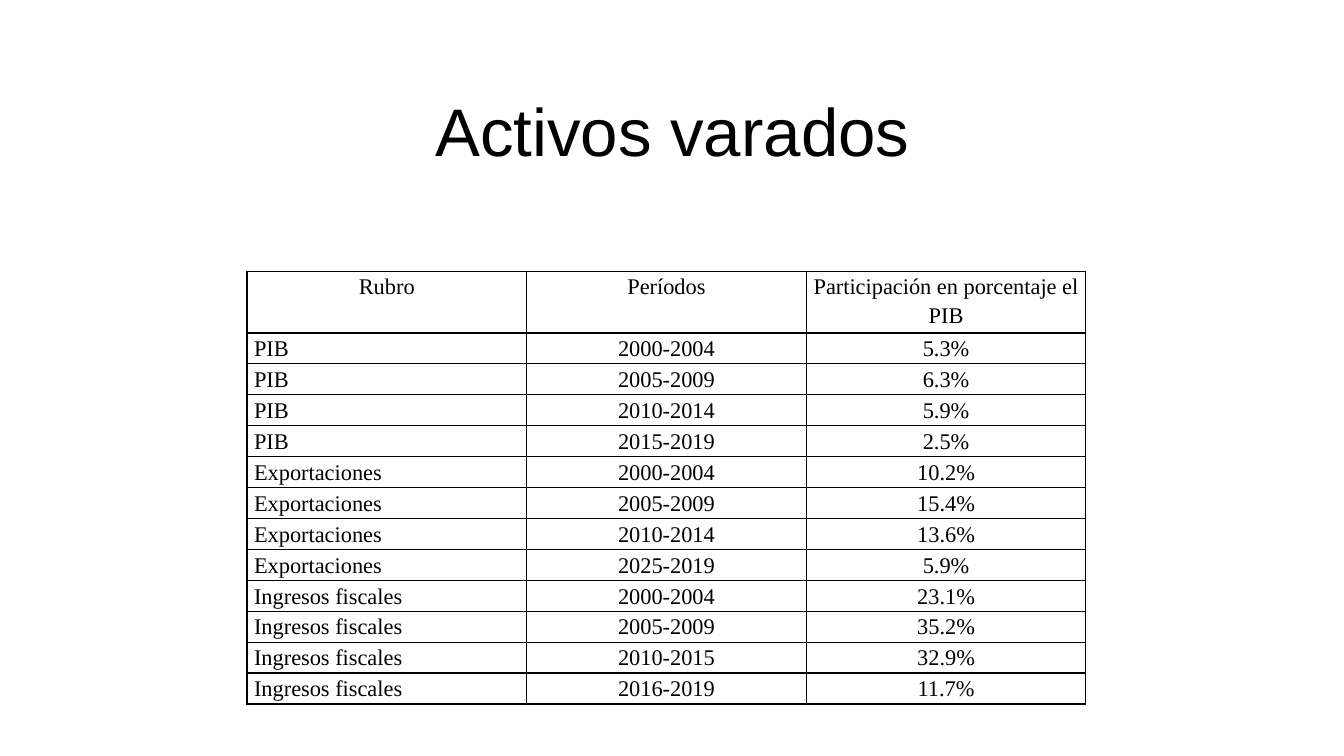
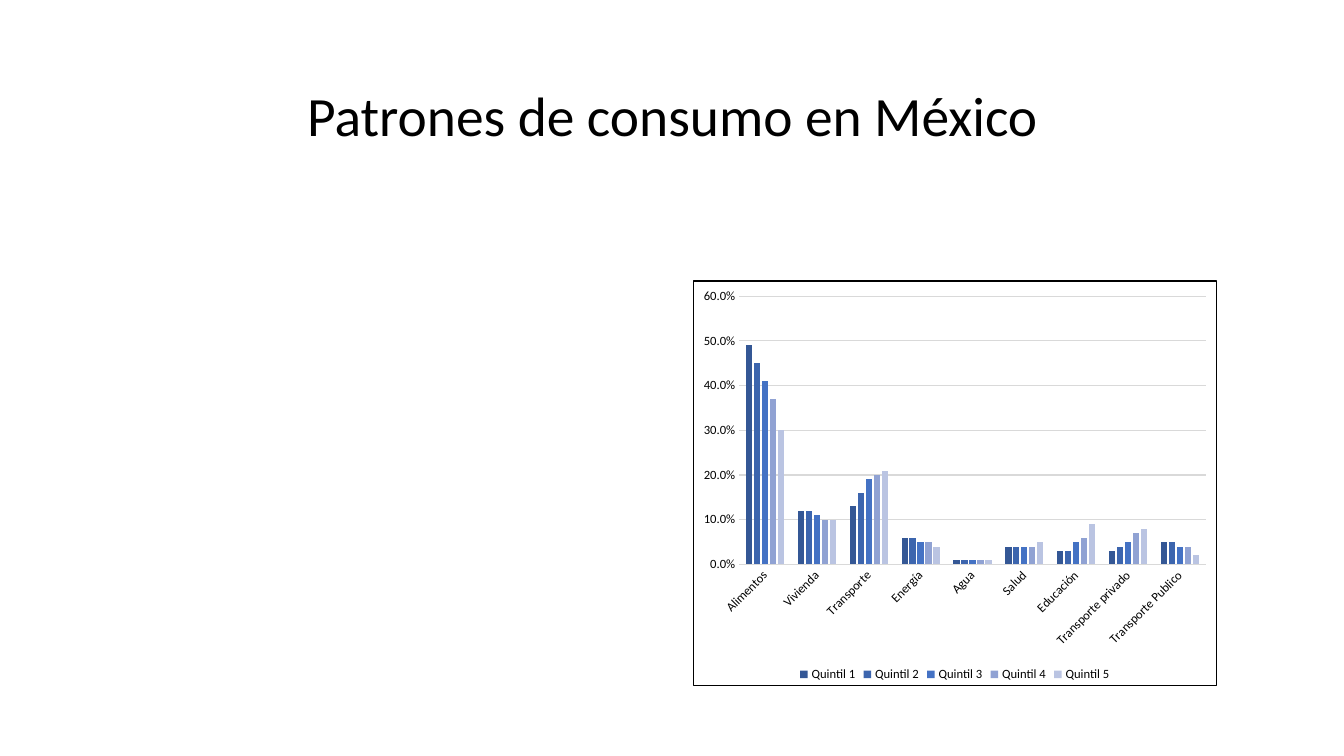
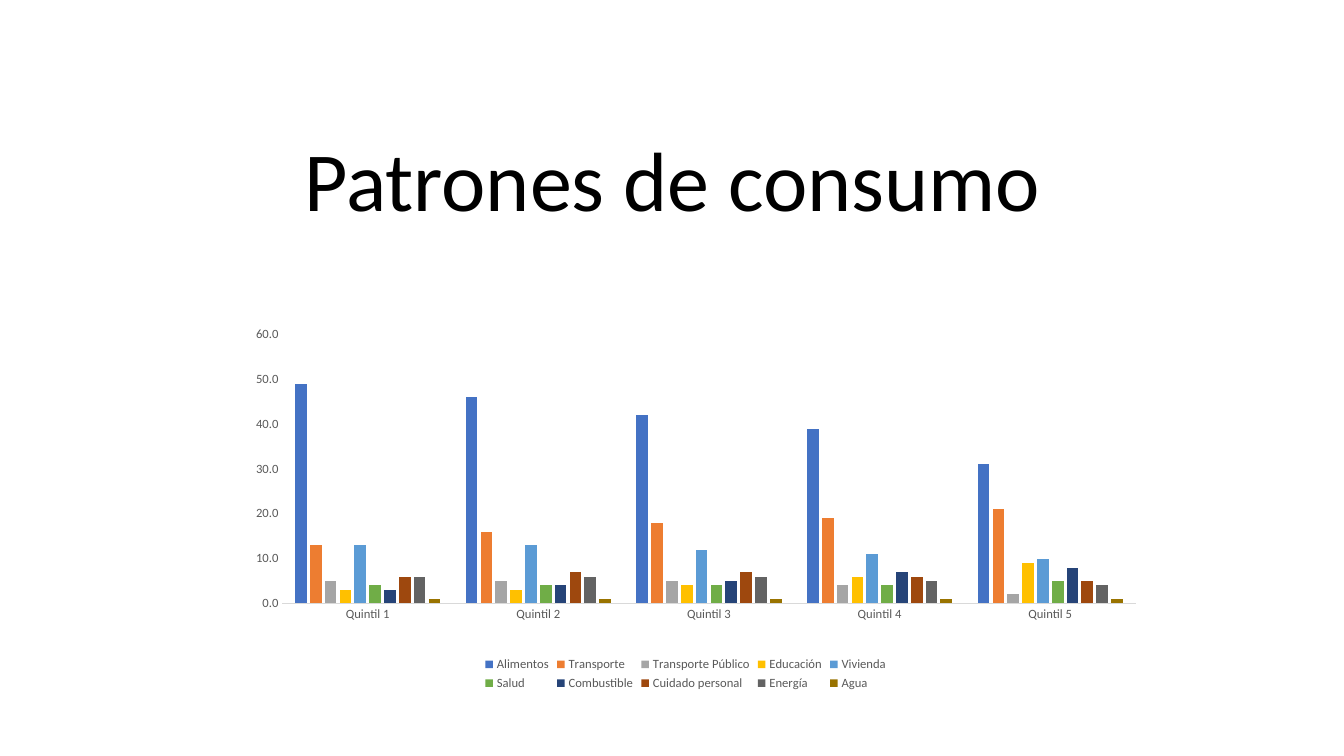
from lxml import etree
from pptx import Presentation
from pptx.chart.data import CategoryChartData
from pptx.dml.color import RGBColor
from pptx.enum.chart import XL_CHART_TYPE, XL_LEGEND_POSITION, XL_TICK_MARK
from pptx.enum.text import MSO_ANCHOR, PP_ALIGN
from pptx.oxml import parse_xml
from pptx.oxml.ns import nsdecls, qn
from pptx.util import Inches, Pt

BLACK, WHITE, GREY, RULE = "000000", "FFFFFF", "595959", "D9D9D9"
QUINTILES = [f"Quintil {number}" for number in range(1, 6)]

PARTICIPATION_HEADER = ("Rubro", "Períodos", "Participación en porcentaje el PIB")
PARTICIPATION = {
    "PIB": [("2000-2004", "5.3%"), ("2005-2009", "6.3%"),
            ("2010-2014", "5.9%"), ("2015-2019", "2.5%")],
    "Exportaciones": [("2000-2004", "10.2%"), ("2005-2009", "15.4%"),
                      ("2010-2014", "13.6%"), ("2025-2019", "5.9%")],
    "Ingresos fiscales": [("2000-2004", "23.1%"), ("2005-2009", "35.2%"),
                          ("2010-2015", "32.9%"), ("2016-2019", "11.7%")],
}

SPENDING_ITEMS = ["Alimentos", "Vivienda", "Transporte", "Energía", "Agua", "Salud",
                  "Educación", "Transporte privado", "Transporte Publico"]
SPENDING_BY_QUINTILE = [
    (QUINTILES[0], "345795", [0.49, 0.12, 0.13, 0.06, 0.01, 0.04, 0.03, 0.03, 0.05]),
    (QUINTILES[1], "3C65AE", [0.45, 0.12, 0.16, 0.06, 0.01, 0.04, 0.03, 0.04, 0.05]),
    (QUINTILES[2], "4472C4", [0.41, 0.11, 0.19, 0.05, 0.01, 0.04, 0.05, 0.05, 0.04]),
    (QUINTILES[3], "90A2D3", [0.37, 0.1, 0.2, 0.05, 0.01, 0.04, 0.06, 0.07, 0.04]),
    (QUINTILES[4], "BAC4E2", [0.3, 0.1, 0.21, 0.04, 0.01, 0.05, 0.09, 0.08, 0.02]),
]
SPENDING_BY_ITEM = [
    ("Alimentos", "4472C4", [49, 46, 42, 39, 31]),
    ("Transporte", "ED7D31", [13, 16, 18, 19, 21]),
    ("Transporte Público", "A5A5A5", [5, 5, 5, 4, 2]),
    ("Educación", "FFC000", [3, 3, 4, 6, 9]),
    ("Vivienda", "5B9BD5", [13, 13, 12, 11, 10]),
    ("Salud", "70AD47", [4, 4, 4, 4, 5]),
    ("Combustible", "264478", [3, 4, 5, 7, 8]),
    ("Cuidado personal", "9E480E", [6, 7, 7, 6, 5]),
    ("Energía", "636363", [6, 6, 6, 5, 4]),
    ("Agua", "997300", [1, 1, 1, 1, 1]),
]


def rgb(code):
    return RGBColor.from_string(code)


def style_font(font, name, size, color):
    font.name, font.size = name, Pt(size)
    font.color.rgb = rgb(color)


def add_title(slide, text, top, height, size, font="Calibri"):
    frame = slide.shapes.add_textbox(
        Inches(1.67), Inches(top), Inches(10), Inches(height)).text_frame
    frame.word_wrap = True
    frame.vertical_anchor = MSO_ANCHOR.BOTTOM
    title = frame.paragraphs[0]
    title.text = text
    title.alignment = PP_ALIGN.CENTER
    title.line_spacing = 0.9
    style_font(title.runs[0].font, font, size, BLACK)


def add_cell_borders(cell):
    properties = cell._tc.get_or_add_tcPr()
    for position, side in enumerate(("lnL", "lnR", "lnT", "lnB")):
        properties.insert(position, parse_xml(
            f'<a:{side} {nsdecls("a")} w="12700"><a:solidFill>'
            f'<a:srgbClr val="{BLACK}"/></a:solidFill></a:{side}>'))


def fill_cell(cell, text, alignment):
    cell.fill.background()
    add_cell_borders(cell)
    cell.margin_left = cell.margin_right = Inches(0.07)
    cell.margin_top = cell.margin_bottom = 0
    paragraph = cell.text_frame.paragraphs[0]
    paragraph.text = text
    paragraph.alignment = alignment
    paragraph.line_spacing = 1.15
    paragraph.space_after = Pt(8)
    style_font(paragraph.runs[0].font, "Times New Roman", 16, BLACK)


def add_participation_table(slide, left, top, width, row_height):
    rows = [PARTICIPATION_HEADER] + [
        (item, period, share)
        for item, shares in PARTICIPATION.items() for period, share in shares]
    table = slide.shapes.add_table(
        len(rows), len(PARTICIPATION_HEADER), Inches(left), Inches(top),
        Inches(width), Inches(row_height * len(rows))).table
    table.first_row = table.horz_banding = False
    for row_index, row in enumerate(rows):
        for column_index, text in enumerate(row):
            is_item = row_index > 0 and column_index == 0
            fill_cell(table.cell(row_index, column_index), text,
                      PP_ALIGN.JUSTIFY if is_item else PP_ALIGN.CENTER)


def add_column_chart(slide, box, categories, series, number_format, color):
    data = CategoryChartData()
    data.categories = categories
    for name, _, values in series:
        data.add_series(name, values)
    chart = slide.shapes.add_chart(
        XL_CHART_TYPE.COLUMN_CLUSTERED, *map(Inches, box), data).chart
    chart.has_title = False
    style_font(chart.font, "Calibri", 10, BLACK)
    chart.has_legend = True
    chart.legend.position = XL_LEGEND_POSITION.BOTTOM
    chart.legend.include_in_layout = False
    style_font(chart.legend.font, "Calibri", 9, color)

    plot = chart.plots[0]
    plot.gap_width, plot.overlap, plot.vary_by_categories = 219, -27, False
    for bars, (_, fill, _) in zip(plot.series, series):
        bars.invert_if_negative = False
        bars.format.fill.solid()
        bars.format.fill.fore_color.rgb = rgb(fill)

    for axis in (chart.category_axis, chart.value_axis):
        axis.major_tick_mark = axis.minor_tick_mark = XL_TICK_MARK.NONE
        axis.has_major_gridlines = False
        style_font(axis.tick_labels.font, "Calibri", 9, color)
    draw_rule(chart.category_axis.format.line)
    chart.value_axis.format.line.fill.background()
    chart.value_axis.minimum_scale = 0
    chart.value_axis.tick_labels.number_format = number_format
    chart.value_axis.tick_labels.number_format_is_linked = False
    return chart


def draw_rule(line):
    line.color.rgb = rgb(RULE)
    line.width = Pt(0.75)


def frame_chart(chart):
    """Give the chart area a white fill and a black border."""
    chart.element.find(qn("c:chart")).addnext(parse_xml(
        f'<c:spPr {nsdecls("c", "a")}>'
        f'<a:solidFill><a:srgbClr val="{WHITE}"/></a:solidFill>'
        f'<a:ln w="12700"><a:solidFill><a:srgbClr val="{BLACK}"/></a:solidFill></a:ln>'
        '</c:spPr>'))


def place_plot(chart, x, y, w, h):
    """Fix the inner plot area, in fractions of the chart."""
    plot_area = chart.element.find(".//" + qn("c:plotArea"))
    for automatic in plot_area.findall(qn("c:layout")):
        plot_area.remove(automatic)
    layout = etree.Element(qn("c:layout"))
    manual = etree.SubElement(layout, qn("c:manualLayout"))
    settings = {"layoutTarget": "inner", "xMode": "edge", "yMode": "edge",
                "x": x, "y": y, "w": w, "h": h}
    for tag, value in settings.items():
        etree.SubElement(manual, qn(f"c:{tag}"), val=str(value))
    plot_area.insert(0, layout)


def build_stranded_assets(slide):
    add_title(slide, "Activos varados", 0.82, 0.93, 48, "Arial")
    add_participation_table(slide, 2.45, 2.69, 8.32, 0.28)


def build_mexico_spending(slide):
    add_title(slide, "Patrones de consumo en México", 0.81, 0.71, 39.6)
    chart = add_column_chart(slide, (6.87, 2.78, 5.2, 4.03), SPENDING_ITEMS,
                             SPENDING_BY_QUINTILE, "0.0%", BLACK)
    chart.value_axis.has_major_gridlines = True
    draw_rule(chart.value_axis.major_gridlines.format.line)
    labels = chart.category_axis._element.find(qn("c:txPr")).find(qn("a:bodyPr"))
    labels.set("rot", "-2700000")
    frame_chart(chart)


def build_quintile_spending(slide):
    add_title(slide, "Patrones de consumo", 1.23, 1.1, 60)
    chart = add_column_chart(slide, (2.15, 3.13, 9.3, 3.76), QUINTILES,
                             SPENDING_BY_ITEM, "0.0", GREY)
    place_plot(chart, 0.07, 0.05, 0.91, 0.71)


def main():
    presentation = Presentation()
    presentation.slide_width, presentation.slide_height = Inches(13.33), Inches(7.5)
    blank = presentation.slide_layouts[6]
    for build in (build_stranded_assets, build_mexico_spending, build_quintile_spending):
        build(presentation.slides.add_slide(blank))
    presentation.save("out.pptx")


if __name__ == "__main__":
    main()
